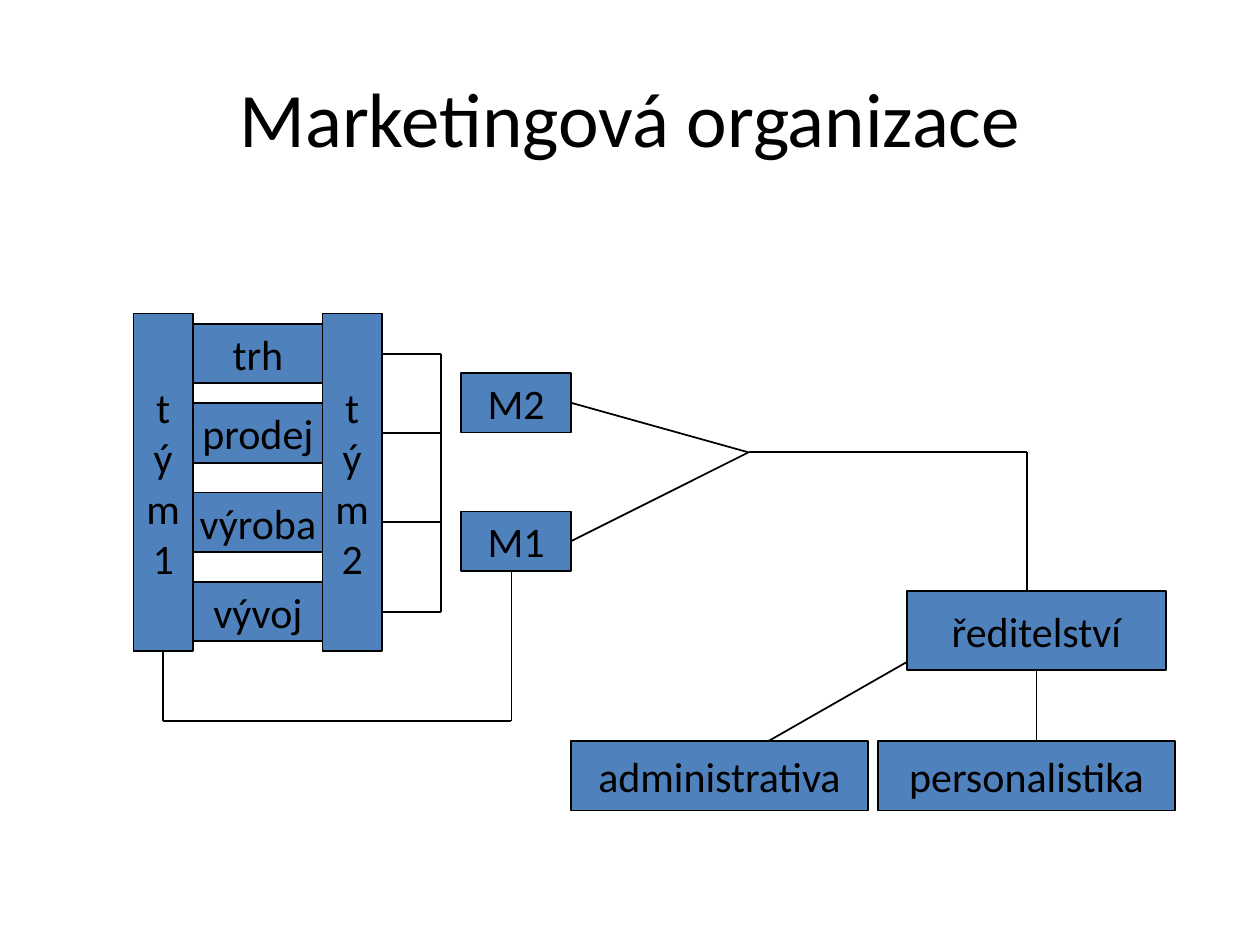
from itertools import pairwise

from lxml.etree import SubElement
from pptx import Presentation
from pptx.dml.color import RGBColor
from pptx.enum.shapes import MSO_CONNECTOR, MSO_SHAPE
from pptx.enum.text import MSO_ANCHOR, PP_ALIGN
from pptx.oxml.ns import qn
from pptx.util import Cm, Pt

# Content
TITLE = "Marketingová organizace"
DEPARTMENTS = [("trh", 6.53), ("prodej", 8.13), ("výroba", 9.93), ("vývoj", 11.73)]
TEAMS = [("tým1", 2.69), ("tým2", 6.5)]
MANAGERS = [("M1", 10.31), ("M2", 7.52)]
SUPPORT = [("administrativa", 11.51), ("personalistika", 17.7)]
HEAD_OFFICE = "ředitelství"

# Layout in centimetres
ROW_HEIGHT = 1.2
DEPARTMENT_LEFT, DEPARTMENT_WIDTH = 3.5, 3.4
TEAM_TOP, TEAM_WIDTH, TEAM_HEIGHT = 6.32, 1.2, 6.81
MANAGER_LEFT, MANAGER_WIDTH = 9.3, 2.21
OFFICE_LEFT, OFFICE_TOP, OFFICE_WIDTH, OFFICE_HEIGHT = 18.29, 11.91, 5.21, 1.6
SUPPORT_TOP, SUPPORT_WIDTH, SUPPORT_HEIGHT = 14.94, 5.99, 1.4
BRACKET_X = 8.89
JUNCTION = (15.09, 9.12)


class Theme:
    font = "Calibri"
    ink = RGBColor(0x00, 0x00, 0x00)
    box = RGBColor(0x4F, 0x81, 0xBD)
    title_size = Pt(44)
    box_size = Pt(24)
    line_width = Pt(1)


def format_text(frame, size):
    frame.vertical_anchor = MSO_ANCHOR.MIDDLE
    for para in frame.paragraphs:
        para.alignment = PP_ALIGN.CENTER
        for span in para.runs:
            span.font.name = Theme.font
            span.font.size = size
            span.font.color.rgb = Theme.ink


def add_box(page, text, left, top, width, height):
    box = page.shapes.add_shape(
        MSO_SHAPE.RECTANGLE, Cm(left), Cm(top), Cm(width), Cm(height))
    box.shadow.inherit = False
    box.fill.solid()
    box.fill.fore_color.rgb = Theme.box
    box.line.color.rgb = Theme.ink
    box.line.width = Theme.line_width
    box.text_frame.text = text
    box.text_frame.word_wrap = False
    format_text(box.text_frame, Theme.box_size)


def add_path(page, *points):
    for start, end in pairwise(points):
        line = page.shapes.add_connector(
            MSO_CONNECTOR.STRAIGHT, *map(Cm, start), *map(Cm, end))
        line.line.color.rgb = Theme.ink
        line.line.width = Theme.line_width
        SubElement(line._element.spPr, qn("a:effectLst"))


def main():
    deck = Presentation()
    deck.slide_width, deck.slide_height = Cm(25.4), Cm(19.05)
    page = deck.slides.add_slide(deck.slide_layouts[5])

    # Title
    title = page.shapes.title
    title.left, title.top, title.width, title.height = map(Cm, (1.27, 0.76, 22.86, 3.18))
    title.text_frame.text = TITLE
    format_text(title.text_frame, Theme.title_size)

    # Departments, each joined to the bracket on the right
    middles = [top + ROW_HEIGHT / 2 for _, top in DEPARTMENTS]
    for (name, top), middle in zip(DEPARTMENTS, middles):
        add_box(page, name, DEPARTMENT_LEFT, top, DEPARTMENT_WIDTH, ROW_HEIGHT)
        add_path(page, (DEPARTMENT_LEFT + DEPARTMENT_WIDTH, middle), (BRACKET_X, middle))
    add_path(page, (BRACKET_X, middles[0]), (BRACKET_X, middles[-1]))

    # Head office and its support units
    add_box(page, HEAD_OFFICE, OFFICE_LEFT, OFFICE_TOP, OFFICE_WIDTH, OFFICE_HEIGHT)
    for name, left in SUPPORT:
        add_box(page, name, left, SUPPORT_TOP, SUPPORT_WIDTH, SUPPORT_HEIGHT)
    office_middle = OFFICE_LEFT + OFFICE_WIDTH / 2
    add_path(page, (OFFICE_LEFT, 13.34), (15.49, SUPPORT_TOP))
    add_path(page, (office_middle, OFFICE_TOP + OFFICE_HEIGHT), (office_middle, SUPPORT_TOP))

    # Teams, one letter to a line
    for name, left in TEAMS:
        add_box(page, "\n".join(name), left, TEAM_TOP, TEAM_WIDTH, TEAM_HEIGHT)

    # Managers, meeting at the junction
    for name, top in MANAGERS:
        add_box(page, name, MANAGER_LEFT, top, MANAGER_WIDTH, ROW_HEIGHT)
        add_path(page, (MANAGER_LEFT + MANAGER_WIDTH, top + ROW_HEIGHT / 2), JUNCTION)

    # Junction to head office, first team to first manager
    add_path(page, JUNCTION, (20.7, JUNCTION[1]), (20.7, OFFICE_TOP))
    team_x = TEAMS[0][1] + TEAM_WIDTH / 2
    manager_x, turn_y = 10.31, 14.53
    add_path(page, (team_x, TEAM_TOP + TEAM_HEIGHT), (team_x, turn_y),
             (manager_x, turn_y), (manager_x, MANAGERS[0][1] + ROW_HEIGHT))

    deck.save("out.pptx")


if __name__ == "__main__":
    main()
